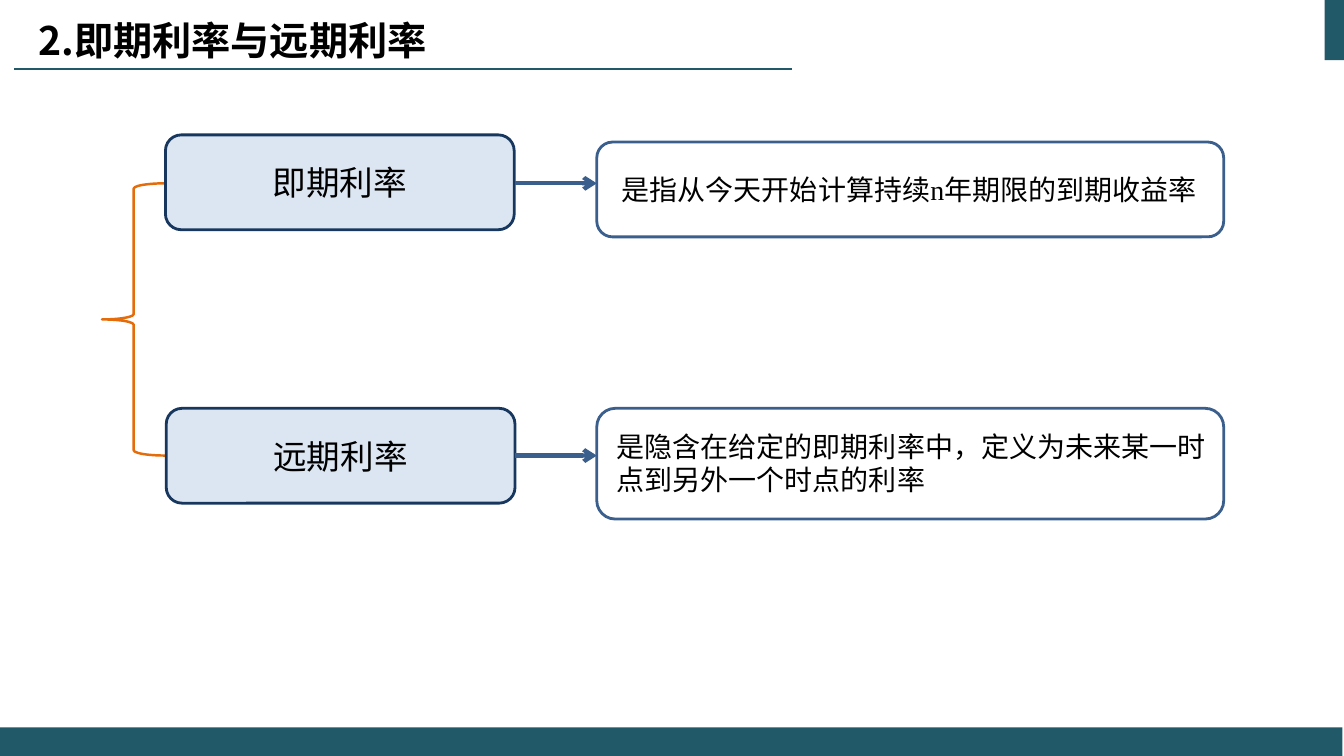
from dataclasses import dataclass

import pptx
import pptx.dml.color
import pptx.enum.shapes
import pptx.enum.text
import pptx.oxml
import pptx.oxml.ns
import pptx.shapes.autoshape
import pptx.shapes.connector
import pptx.slide
import pptx.text.text
import pptx.util

Cm = pptx.util.Cm
Pt = pptx.util.Pt
MSO_SHAPE = pptx.enum.shapes.MSO_SHAPE
PP_ALIGN = pptx.enum.text.PP_ALIGN
MSO_ANCHOR = pptx.enum.text.MSO_ANCHOR
Box = tuple[float, float, float, float]


@dataclass(frozen=True)
class Theme:
    teal: str = "215968"
    orange: str = "E46C0A"
    navy: str = "17375E"
    steel: str = "3A5F8C"
    pale: str = "DCE6F2"
    ink: str = "000000"
    cjk_font: str = "Noto Sans CJK SC"
    body_font: str = "Times New Roman"
    title_size: int = 28
    term_size: int = 24
    body_size: int = 20


@dataclass(frozen=True)
class Definition:
    """A term and its meaning; boxes are left, top, width, height in cm."""
    term: str
    meaning: str
    term_box: Box
    frame_box: Box
    text_box: Box
    arrow_y: float


THEME = Theme()
ARROW_START, ARROW_END = 12.98, 15.04
DEFINITIONS = [
    Definition("即期利率", "是指从今天开始计算持续n年期限的到期收益率",
               (4.17, 3.4, 8.79, 2.39), (ARROW_END, 3.58, 15.8, 2.39),
               (15.42, 4.22, 15.8, 1.12), 4.62),
    Definition("远期利率", "是隐含在给定的即期利率中，定义为未来某一时点到另外一个时点的利率",
               (4.19, 10.29, 8.79, 2.39), (ARROW_END, 10.29, 15.8, 2.79),
               (15.29, 10.69, 15.8, 1.96), 11.48),
]


def rgb(colour: str) -> pptx.dml.color.RGBColor:
    return pptx.dml.color.RGBColor.from_string(colour)


def write(tf: pptx.text.text.TextFrame, text: str, size: int, font: str,
          align: PP_ALIGN, bold: bool = False) -> None:
    tf.word_wrap = True
    p = tf.paragraphs[0]
    p.text = text
    p.alignment = align
    p.font.size = Pt(size)
    p.font.bold = bold
    p.font.color.rgb = rgb(THEME.ink)
    p.font.name = font


def add_shape(s: pptx.slide.Slide, kind: MSO_SHAPE, box: Box, fill: str = "",
              line: str = "", width: float = 2) -> pptx.shapes.autoshape.Shape:
    """Add a shape; an empty colour means no fill or no line."""
    sp = s.shapes.add_shape(kind, *map(Cm, box))
    sp.shadow.inherit = False
    for part, colour in ((sp.fill, fill), (sp.line.fill, line)):
        if colour:
            part.solid()
            part.fore_color.rgb = rgb(colour)
        else:
            part.background()
    if line:
        sp.line.width = Pt(width)
    return sp


def add_line(s: pptx.slide.Slide, x1: float, x2: float, y: float, colour: str,
             width: float) -> pptx.shapes.connector.Connector:
    line = s.shapes.add_connector(pptx.enum.shapes.MSO_CONNECTOR.STRAIGHT,
                                  Cm(x1), Cm(y), Cm(x2), Cm(y))
    line.line.color.rgb = rgb(colour)
    line.line.width = Pt(width)
    pptx.oxml.ns.qn("a:effectLst")
    line._element.spPr.append(xml("effectLst"))
    return line


def xml(tag: str, attributes: str = ""):
    return pptx.oxml.parse_xml(
        f'<a:{tag} {pptx.oxml.ns.nsdecls("a")} {attributes}/>')


def add_title(s: pptx.slide.Slide, text: str) -> None:
    title = s.shapes.title
    title.left, title.top, title.width, title.height = map(
        Cm, (0.36, 0.33, 11, 1.37))
    tf = title.text_frame
    tf.vertical_anchor = MSO_ANCHOR.MIDDLE
    write(tf, text, THEME.title_size, THEME.cjk_font, PP_ALIGN.CENTER, True)


def add_definition(s: pptx.slide.Slide, item: Definition) -> None:
    term = add_shape(s, MSO_SHAPE.ROUNDED_RECTANGLE, item.term_box,
                     THEME.pale, THEME.navy)
    term.text_frame.vertical_anchor = MSO_ANCHOR.MIDDLE
    write(term.text_frame, item.term, THEME.term_size, THEME.body_font,
          PP_ALIGN.CENTER)
    add_shape(s, MSO_SHAPE.ROUNDED_RECTANGLE, item.frame_box, line=THEME.steel)
    meaning = s.shapes.add_textbox(*map(Cm, item.text_box))
    write(meaning.text_frame, item.meaning, THEME.body_size, THEME.body_font,
          PP_ALIGN.LEFT)
    meaning.text_frame.auto_size = pptx.enum.text.MSO_AUTO_SIZE.SHAPE_TO_FIT_TEXT
    arrow = add_line(s, ARROW_START, ARROW_END, item.arrow_y, THEME.steel, 3)
    arrow.line._get_or_add_ln().append(xml("tailEnd", 'type="arrow"'))


def main() -> None:
    prs = pptx.Presentation()
    prs.slide_width, prs.slide_height = Cm(33.87), Cm(19.05)
    s = prs.slides.add_slide(prs.slide_layouts[5])
    for band in ((33.38, 0, 0.49, 1.52), (0, 18.33, 33.83, 0.72)):
        add_shape(s, MSO_SHAPE.RECTANGLE, band, THEME.teal)
    add_line(s, 0.36, 19.96, 1.73, THEME.teal, 1.5)
    add_title(s, "2.即期利率与远期利率")
    top, bottom = (item.arrow_y for item in DEFINITIONS)
    add_shape(s, MSO_SHAPE.LEFT_BRACE, (2.57, top, 1.6, bottom - top),
              line=THEME.orange, width=1.75)
    for item in DEFINITIONS:
        add_definition(s, item)
    prs.save("out.pptx")


if __name__ == "__main__":
    main()
